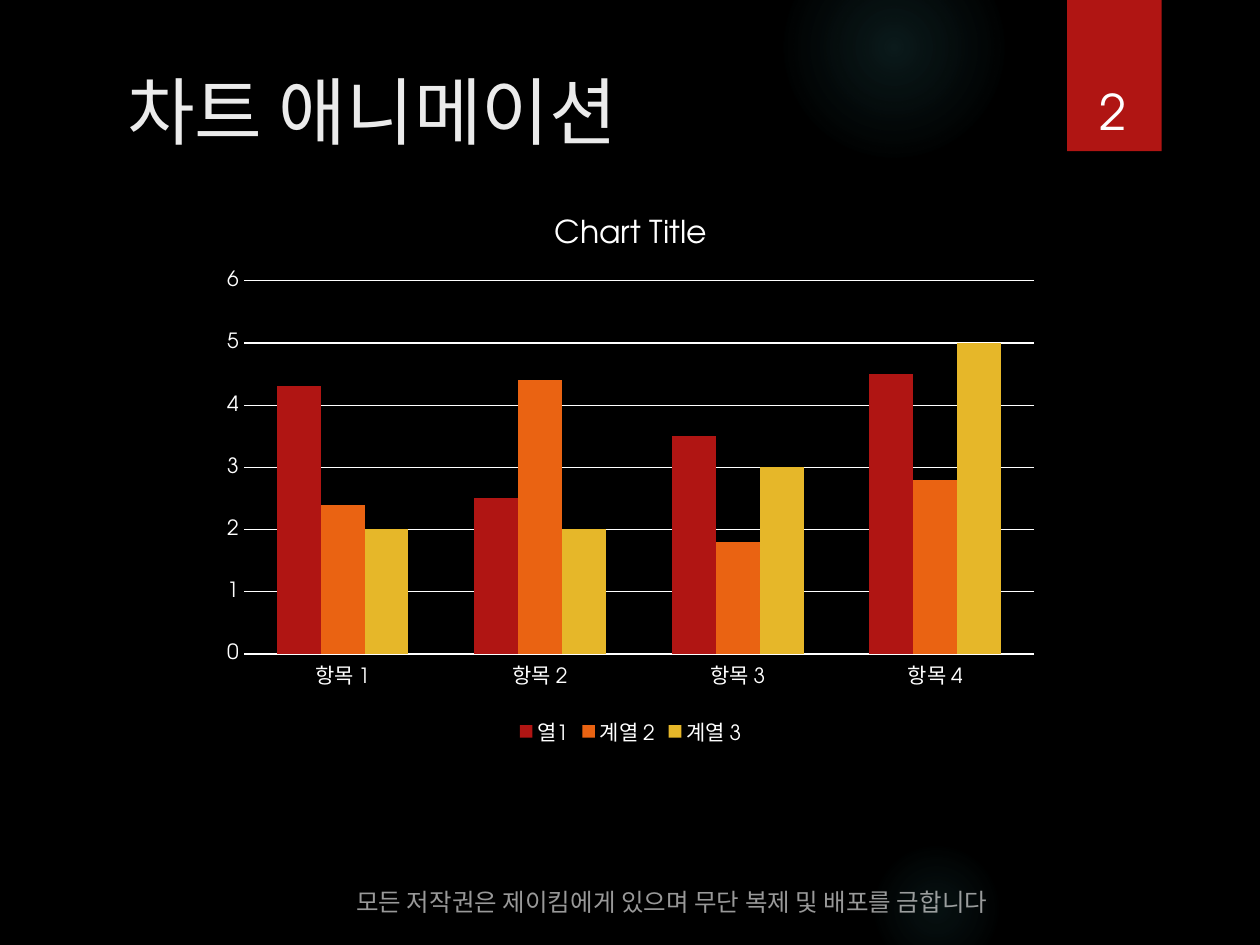
import pptx
import pptx.chart.data
import pptx.dml.color
import pptx.enum.chart
import pptx.enum.shapes
import pptx.enum.text
import pptx.oxml
import pptx.oxml.ns
import pptx.util

Inches = pptx.util.Inches
Pt = pptx.util.Pt
Anchor = pptx.enum.text.MSO_ANCHOR
Align = pptx.enum.text.PP_ALIGN
Shape = pptx.enum.shapes.MSO_SHAPE

FONT = "TeX Gyre Adventor"
COLORS = {
    "background": "000000",
    "glow": "50B9C1",
    "title": "EBEBEB",
    "text": "FFFFFF",
    "red": "B01513",
    "orange": "EA6312",
    "yellow": "E6B729",
}
CATEGORIES = ["항목 1", "항목 2", "항목 3", "항목 4"]
SERIES = [
    ("열1", [4.3, 2.5, 3.5, 4.5], "red"),
    ("계열 2", [2.4, 4.4, 1.8, 2.8], "orange"),
    ("계열 3", [2, 2, 3, 5], "yellow"),
]


def rgb(name):
    return pptx.dml.color.RGBColor.from_string(COLORS[name])


def inches(box):
    return [Inches(length) for length in box]


def format_font(font, size, color="text"):
    font.name = FONT
    font.size = Pt(size)
    font.bold = False
    font.color.rgb = rgb(color)


def write_text(shape, text, size=14, color="text", align=Align.LEFT,
               anchor=Anchor.BOTTOM, opacity=100):
    frame = shape.text_frame
    frame.word_wrap = True
    frame.auto_size = pptx.enum.text.MSO_AUTO_SIZE.NONE
    frame.vertical_anchor = anchor
    paragraph = frame.paragraphs[0]
    paragraph.alignment = align
    run = paragraph.add_run()
    run.text = text
    format_font(run.font, size, color)
    if opacity < 100:
        color_element = run.font.fill._xPr.find(".//" + pptx.oxml.ns.qn("a:srgbClr"))
        alpha = color_element.makeelement(
            pptx.oxml.ns.qn("a:alpha"), {"val": str(opacity * 1000)})
        color_element.append(alpha)


def add_glow(slide, box, stops):
    glow = slide.shapes.add_shape(Shape.OVAL, *inches(box))
    glow.shadow.inherit = False
    glow.line.fill.background()
    stop_xml = "".join(
        f'<a:gs pos="{position * 1000}"><a:srgbClr val="{COLORS["glow"]}">'
        f'<a:alpha val="{opacity * 1000}"/></a:srgbClr></a:gs>'
        for position, opacity in stops)
    gradient = pptx.oxml.parse_xml(
        f'<a:gradFill {pptx.oxml.ns.nsdecls("a")} rotWithShape="1">'
        f'<a:gsLst>{stop_xml}</a:gsLst><a:path path="circle">'
        '<a:fillToRect l="50000" t="50000" r="50000" b="50000"/>'
        '</a:path></a:gradFill>')
    glow._element.spPr.find(pptx.oxml.ns.qn("a:prstGeom")).addnext(gradient)


def add_number_tab(slide, box, number):
    tab = slide.shapes.add_shape(Shape.RECTANGLE, *inches(box))
    tab.shadow.inherit = False
    tab.fill.solid()
    tab.fill.fore_color.rgb = rgb("red")
    tab.line.fill.background()
    left, top, width, height = box
    label = slide.shapes.add_textbox(
        *inches((left + 0.02, top + 0.32, width - 0.06, height - 0.36)))
    write_text(label, number, size=28, align=Align.CENTER)


def place_title(slide, box, text):
    title = slide.shapes.title
    title.left, title.top, title.width, title.height = inches(box)
    write_text(title, text, size=42, color="title", anchor=Anchor.MIDDLE)


def add_footer(slide, box, text):
    footer = slide.shapes.add_textbox(*inches(box))
    write_text(footer, text, opacity=60)


def add_column_chart(slide, box):
    data = pptx.chart.data.CategoryChartData()
    data.categories = CATEGORIES
    for name, values, _ in SERIES:
        data.add_series(name, values)
    chart = slide.shapes.add_chart(
        pptx.enum.chart.XL_CHART_TYPE.COLUMN_CLUSTERED, *inches(box), data).chart
    format_font(chart.font, 12)

    chart.has_title = True
    chart.chart_title.include_in_layout = False
    title = chart.chart_title.text_frame
    title.text = "Chart Title"
    format_font(title.paragraphs[0].runs[0].font, 18)

    chart.has_legend = True
    chart.legend.position = pptx.enum.chart.XL_LEGEND_POSITION.BOTTOM
    chart.legend.include_in_layout = False
    format_font(chart.legend.font, 12)

    plot = chart.plots[0]
    plot.gap_width = 150
    plot.overlap = 0
    plot.vary_by_categories = False
    for series, (_, _, color) in zip(plot.series, SERIES):
        series.format.fill.solid()
        series.format.fill.fore_color.rgb = rgb(color)

    for axis in (chart.category_axis, chart.value_axis):
        axis.major_tick_mark = pptx.enum.chart.XL_TICK_MARK.NONE
        axis.minor_tick_mark = pptx.enum.chart.XL_TICK_MARK.NONE
        axis.format.line.fill.background()
        format_font(axis.tick_labels.font, 12)
    value_axis = chart.value_axis
    value_axis.minimum_scale = 0
    value_axis.maximum_scale = 6
    value_axis.major_unit = 1
    value_axis.has_major_gridlines = True
    gridline = value_axis.major_gridlines.format.line
    gridline.color.rgb = rgb("text")
    gridline.width = Pt(0.75)


def main():
    presentation = pptx.Presentation()
    presentation.slide_width = Inches(10)
    presentation.slide_height = Inches(7.5)
    slide = presentation.slides.add_slide(presentation.slide_layouts[5])
    slide.background.fill.solid()
    slide.background.fill.fore_color.rgb = rgb("background")

    add_glow(slide, (6.22, -0.5, 1.75, 1.75), [(0, 14), (36, 7), (73, 0)])
    add_glow(slide, (6.89, 6.67, 1.08, 1.08), [(0, 9), (36, 5), (66, 0)])
    add_number_tab(slide, (8.47, 0, 0.75, 1.2), "2")
    place_title(slide, (0.91, 0.5, 7.34, 0.75), "차트 애니메이션")
    add_footer(slide, (2.73, 6.92, 6.18, 0.4),
               "모든 저작권은 제이킴에게 있으며 무단 복제 및 배포를 금합니다")
    add_column_chart(slide, (1.67, 1.53, 6.67, 4.44))
    presentation.save("out.pptx")


if __name__ == "__main__":
    main()
